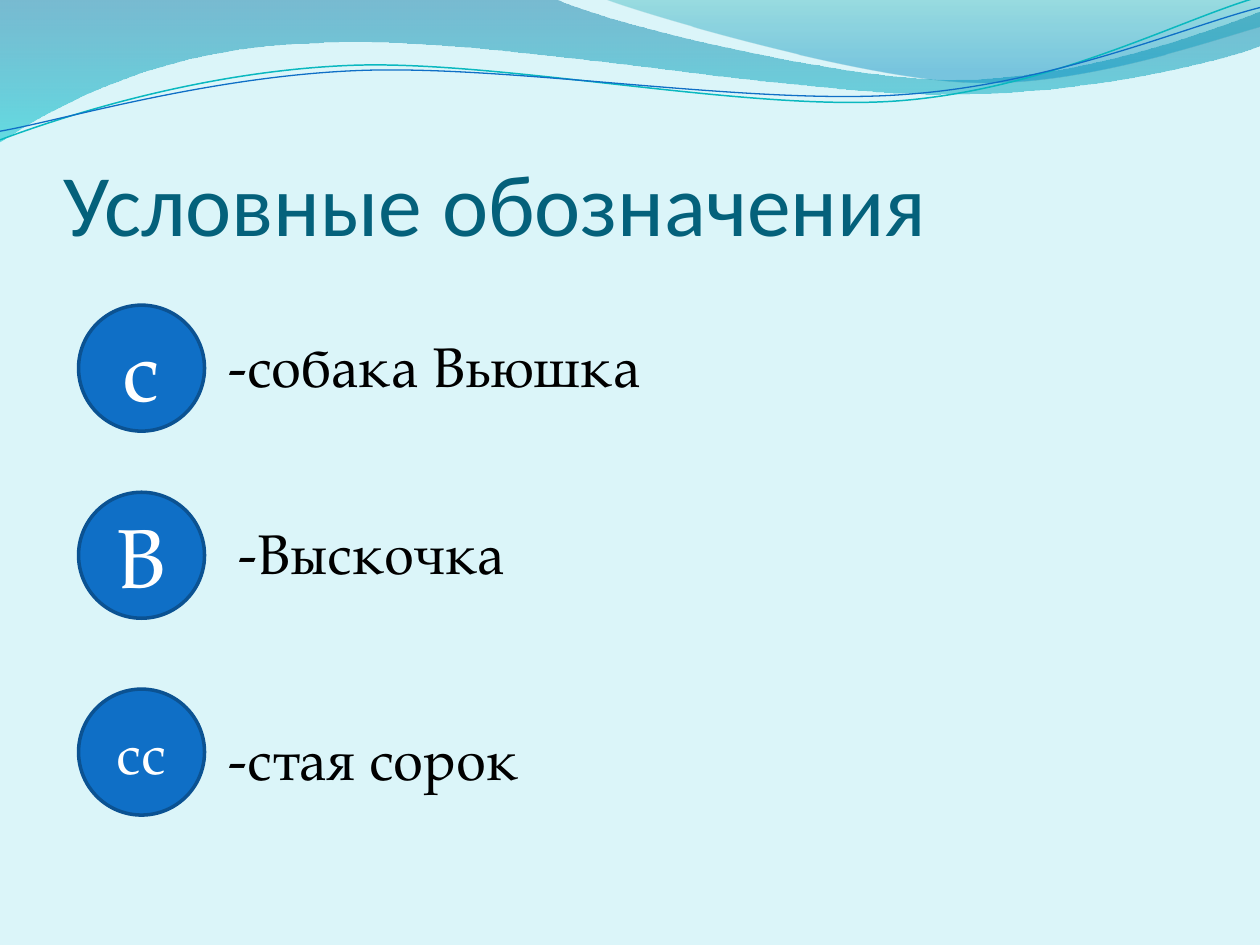
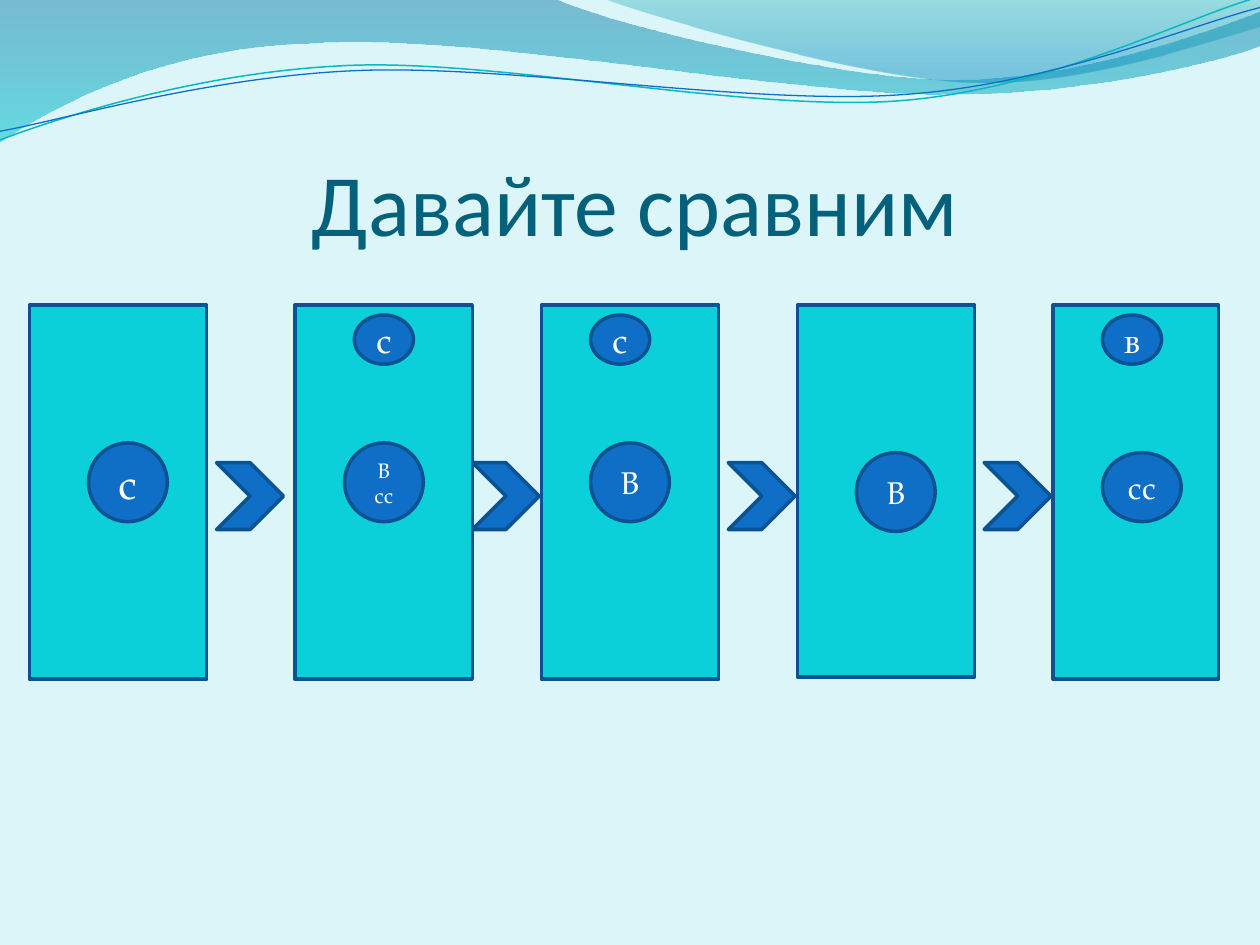
import pptx
import pptx.util
import pptx.dml.color
import pptx.enum.shapes
import pptx.enum.text
import pptx.oxml.ns
from lxml import etree

Pt = pptx.util.Pt
qn = pptx.oxml.ns.qn
SHAPES = pptx.enum.shapes.MSO_SHAPE
ALIGN = pptx.enum.text.PP_ALIGN
ANCHOR = pptx.enum.text.MSO_ANCHOR

COLOURS = {
    "background": "DBF5F9", "title": "04617B", "label": "000000", "light": "FFFFFF",
    "token": "0F6FC6", "panel": "0BD0D9", "outline": "0B5292",
    "teal_line": "0AB8BF", "wave_blue": "0074A1", "wave_cyan": "00C6CF",
    "crest_green": "00A1A9", "crest_blue": "008BBF",
}
TITLE_FONT = "Calibri"
BODY_FONT = "TeX Gyre Pagella"
LINE_ROTATION = 357.3

WAVE = [[(0, 0)], [(317, -0.7)],
        [(342.7, 12.2), (478, 45.4), (545.8, 45.4)],
        [(614.2, 45.4), (689.8, 18.7), (720, 6.5)],
        [(720.7, 25.9)],
        [(707.8, 31.7), (626.4, 54.7), (537.1, 54)],
        [(447.8, 54), (275, 20.2), (185, 24.5)],
        [(92.9, 25.9), (33.1, 59.8), (-0.7, 81.4)],
        [(0, 0)]]
CREST = [[(344.9, -0.7)],
         [(366.5, 7.9), (491, 44.6), (553.7, 46.8)],
         [(616.3, 49.7), (691.9, 23), (720, 15.1)],
         [(720, 0)], [(344.9, -0.7)]]
TEAL_LINE = [[(-1.4, 63)],
             [(33.8, 51.7), (114.1, 29.4), (199.8, 29.9)],
             [(284.9, 30.3), (425.8, 67.3), (512.4, 64.9)],
             [(599, 62.4), (676.5, 25.7), (720.2, 15.5)]]
BLUE_LINE = [[(-1.1, 58)],
             [(32.9, 53.8), (118.3, 32.5), (204.1, 33)],
             [(290.6, 33.4), (428.9, 63.8), (515.5, 61.4)],
             [(601.3, 59.6), (678.5, 30.1), (721.4, 21.3)]]


def colour(name):
    """Return the named colour as an RGB value."""
    return pptx.dml.color.RGBColor.from_string(COLOURS[name])


def add_curve(slide, outline, close):
    """Add a freeform whose three-point segments are cubic curves."""
    points = [(Pt(x), Pt(y)) for segment in outline for x, y in segment]
    builder = slide.shapes.build_freeform(*points[0])
    builder.add_line_segments(points[1:], close=close)
    shape = builder.convert_to_shape()
    shape.shadow.inherit = False
    strokes = iter(list(shape.element.spPr.iter(qn("a:lnTo"))))
    for segment in outline[1:]:
        parts = [next(strokes) for _ in segment]
        if len(parts) == 3:
            curve = etree.Element(qn("a:cubicBezTo"))
            parts[0].addprevious(curve)
            for part in parts:
                curve.append(part[0])
                part.getparent().remove(part)
    return shape


def add_wave(slide, outline, stops):
    """Add a closed wave with a translucent gradient running downwards."""
    shape = add_curve(slide, outline, True)
    shape.line.fill.background()
    shape.fill.gradient()
    shape.fill.gradient_angle = 270
    for stop, (position, name, _) in zip(shape.fill.gradient_stops, stops):
        stop.position = position
        stop.color.rgb = colour(name)
    for element, (_, _, opacity) in zip(shape.element.spPr.iter(qn("a:srgbClr")), stops):
        etree.SubElement(element, qn("a:alpha"), val=str(opacity * 1000))


def add_wave_line(slide, outline, name, width):
    """Add an open, slightly tilted curved line."""
    shape = add_curve(slide, outline, False)
    shape.rotation = LINE_ROTATION
    shape.fill.background()
    shape.line.color.rgb = colour(name)
    shape.line.width = Pt(width)


def add_run(paragraph, text, size, font, name):
    """Add one formatted run."""
    run = paragraph.add_run()
    run.text = text
    run.font.size = Pt(size)
    run.font.name = font
    run.font.color.rgb = colour(name)


def add_title(slide, text, alignment):
    """Add the slide title, resting on the bottom of its box."""
    box = slide.shapes.add_textbox(Pt(36), Pt(55.4), Pt(653.8), Pt(90))
    frame = box.text_frame
    frame.word_wrap = True
    frame.vertical_anchor = ANCHOR.BOTTOM
    frame.margin_left = frame.margin_right = frame.margin_bottom = 0
    frame.margin_top = Pt(3.6)
    frame.paragraphs[0].alignment = alignment
    add_run(frame.paragraphs[0], text, 50, TITLE_FONT, "title")


def add_label(slide, text, left, top, width):
    """Add the explanation beside a token."""
    box = slide.shapes.add_textbox(Pt(left), Pt(top), Pt(width), Pt(46))
    box.text_frame.word_wrap = True
    box.text_frame.auto_size = pptx.enum.text.MSO_AUTO_SIZE.SHAPE_TO_FIT_TEXT
    add_run(box.text_frame.paragraphs[0], text, 32, BODY_FONT, "label")


def add_block(slide, kind, left, top, width, height, fill):
    """Add a filled preset shape with the shared outline."""
    shape = slide.shapes.add_shape(kind, Pt(left), Pt(top), Pt(width), Pt(height))
    shape.shadow.inherit = False
    shape.fill.solid()
    shape.fill.fore_color.rgb = colour(fill)
    shape.line.color.rgb = colour("outline")
    shape.line.width = Pt(2)
    return shape


def add_token(slide, text, size, left, top, width, height):
    """Add a round token that stands for a character."""
    shape = add_block(slide, SHAPES.OVAL, left, top, width, height, "token")
    shape.text_frame.word_wrap = True
    shape.text_frame.vertical_anchor = ANCHOR.MIDDLE
    paragraph = shape.text_frame.paragraphs[0]
    paragraph.alignment = ALIGN.CENTER
    add_run(paragraph, text, size, BODY_FONT, "light")


def add_base_slide(presentation, title, alignment):
    """Add a blank slide with background, waves and title."""
    slide = presentation.slides.add_slide(presentation.slide_layouts[6])
    slide.background.fill.solid()
    slide.background.fill.fore_color.rgb = colour("background")
    add_wave(slide, WAVE, [(0, "wave_blue", 45), (1, "wave_cyan", 55)])
    add_wave(slide, CREST, [(0, "crest_green", 30), (0.8, "crest_blue", 45)])
    add_wave_line(slide, TEAL_LINE, "teal_line", 0.85)
    add_wave_line(slide, BLUE_LINE, "token", 0.75)
    add_title(slide, title, alignment)
    return slide


def add_legend_slide(presentation):
    """Build the slide that explains the tokens."""
    slide = add_base_slide(presentation, "Условные обозначения", ALIGN.LEFT)
    entries = [
        ("с", 48, 174.4, "-собака Вьюшка", 123.8, 185.6, 249.8),
        ("В", 48, 281.3, "-Выскочка", 129.4, 292.5, 167),
        ("сс", 32, 393.8, "-стая сорок", 123.8, 410.4, 274.4),
    ]
    for token, size, token_top, *_ in entries:
        add_token(slide, token, size, 44.9, token_top, 72, 72)
    for *_, label, left, top, width in entries:
        add_label(slide, label, left, top, width)


def add_comparison_slide(presentation):
    """Build the slide with the chain of panels."""
    slide = add_base_slide(presentation, "Давайте сравним", ALIGN.CENTER)
    process, rectangle = SHAPES.FLOWCHART_PROCESS, SHAPES.RECTANGLE
    panels = [
        (process, 16.8, 101.3, 213.8), (process, 168.6, 101.3, 213.8),
        (rectangle, 309.4, 101.3, 213.8), (rectangle, 455.7, 101.3, 212.6),
        (process, 601.8, 94.5, 213.8),
    ]
    for kind, left, width, height in panels:
        add_block(slide, kind, left, 174.4, width, height, "panel")
    for index in range(4):
        add_block(slide, SHAPES.CHEVRON, 123.8 + 146.2 * index, 264.4, 38.2, 38.2, "token")
    for text, left in [("с", 202.5), ("с", 337.5), ("в", 630)]:
        add_token(slide, text, 20, left, 180, 33.8, 28.1)
    main_tokens = [
        ("с", 24, 50.6, 253.1, 45), ("В сс", 12, 196.9, 253.1, 45),
        ("В", 18, 337.5, 253.1, 45), ("В", 18, 489.4, 258.7, 45),
        ("сс", 18, 630, 258.7, 39.4),
    ]
    for text, size, left, top, height in main_tokens:
        add_token(slide, text, size, left, top, 45, height)


def main():
    """Build and save the presentation."""
    presentation = pptx.Presentation()
    presentation.slide_width = Pt(720)
    presentation.slide_height = Pt(540)
    add_legend_slide(presentation)
    add_comparison_slide(presentation)
    presentation.save("out.pptx")


if __name__ == "__main__":
    main()
